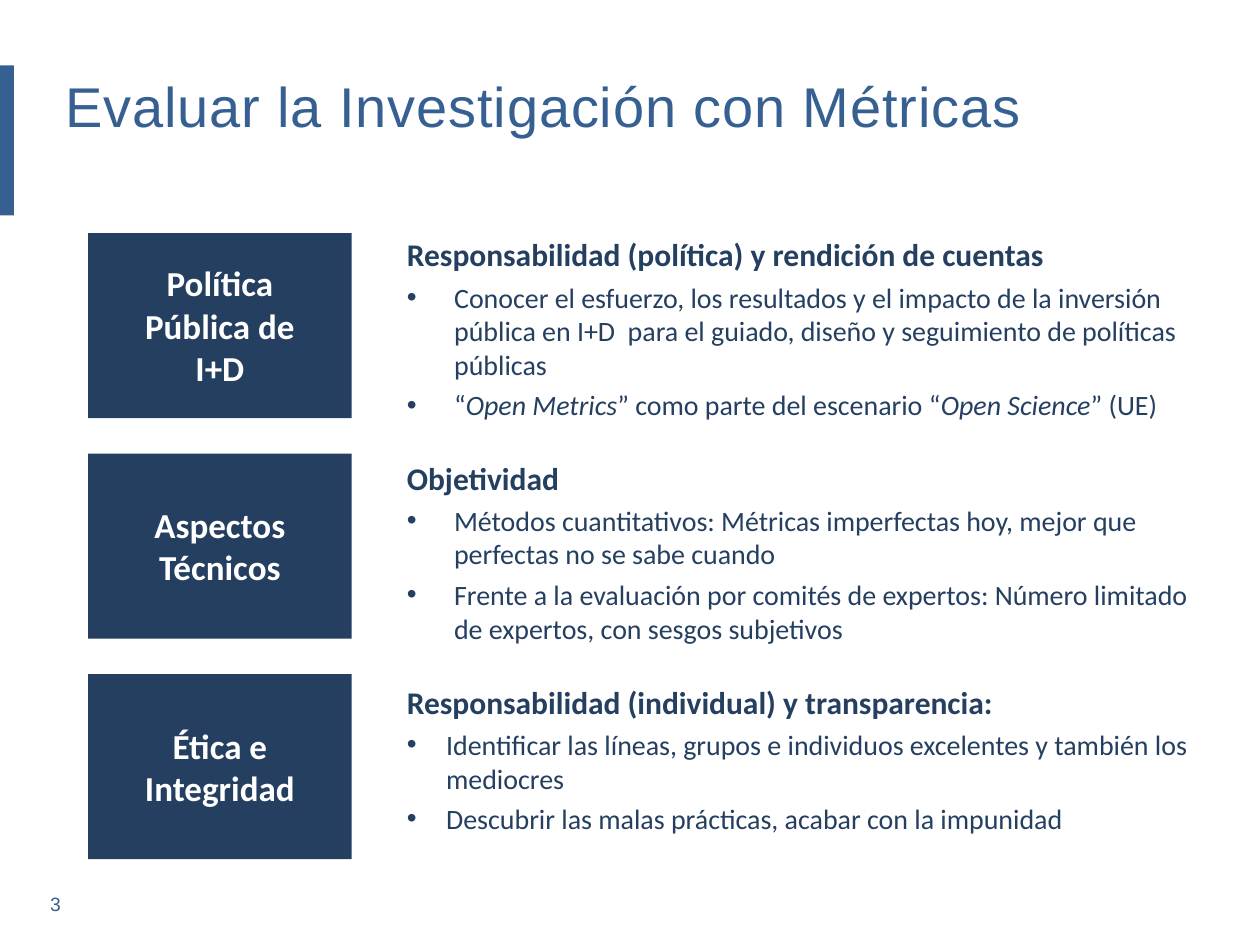
from dataclasses import dataclass

from lxml.etree import SubElement
from pptx import Presentation
from pptx.dml.color import RGBColor
from pptx.enum.shapes import MSO_SHAPE as Preset
from pptx.enum.text import MSO_ANCHOR as Anchor, MSO_AUTO_SIZE as AutoSize, PP_ALIGN as Align
from pptx.oxml.ns import qn
from pptx.util import Pt

NAVY, BLUE, WHITE = "253F61", "376092", "FFFFFF"
BLOCK_LEFT, BLOCK_TOP, BLOCK_WIDTH, BLOCK_HEIGHT = 50.4, 133.2, 150.5, 105.8
BLOCK_PITCH = 126
BODY_LEFT = 225.4
SPACE_AFTER = 4


@dataclass
class Run:
    text: str
    italic: bool = False


@dataclass
class Topic:
    label: str
    label_width: float
    label_height: float
    heading: str
    bullets: list[list[Run]]
    body_top: float
    body_width: float
    body_height: float
    indent: float


TOPICS = [
    Topic("Política Pública de I+D", 121.7, 79.9,
          "Responsabilidad (política) y rendición de cuentas",
          [[Run("Conocer el esfuerzo, los resultados y el impacto de la inversión pública "
                "en I+D  para el guiado, diseño y seguimiento de políticas públicas")],
           [Run("“"), Run("Open Metrics", True), Run("” como parte del escenario “"),
            Run("Open Science", True), Run("” (UE)")]],
          131, 454.3, 118.8, 27),
    Topic("Aspectos Técnicos", 121.7, 55.4,
          "Objetividad",
          [[Run("Métodos cuantitativos: Métricas imperfectas hoy, mejor que perfectas "
                "no se sabe cuando")],
           [Run("Frente a la evaluación por comités de expertos: Número limitado de "
                "expertos, con sesgos subjetivos")]],
          258.5, 463.7, 114.5, 27),
    Topic("Ética e Integridad", BLOCK_WIDTH, 55.4,
          "Responsabilidad (individual) y transparencia:",
          [[Run("Identificar las líneas, grupos e individuos excelentes y también los "
                "mediocres")],
           [Run("Descubrir las malas prácticas, acabar con la impunidad")]],
          386.6, 482.4, 97.9, 22.5),
]


def color(value: str) -> RGBColor:
    return RGBColor.from_string(value)


def add_block(slide, left: float, top: float, width: float, height: float, fill: str) -> None:
    shape = slide.shapes.add_shape(Preset.RECTANGLE, Pt(left), Pt(top), Pt(width), Pt(height))
    shape.shadow.inherit = False
    shape.fill.solid()
    shape.fill.fore_color.rgb = color(fill)
    shape.line.fill.background()


def add_frame(slide, left: float, top: float, width: float, height: float, anchor=Anchor.TOP):
    """Add a wrapping text box and return its text frame."""
    box = slide.shapes.add_textbox(Pt(left), Pt(top), Pt(width), Pt(height))
    frame = box.text_frame
    frame.word_wrap = True
    frame.auto_size = AutoSize.SHAPE_TO_FIT_TEXT
    frame.vertical_anchor = anchor
    return frame


def add_run(paragraph, text: str, size: float, fill: str, font: str = "Calibri",
            bold: bool = False, italic: bool = False, spacing: float = 0) -> None:
    run = paragraph.add_run()
    run.text = text
    run.font.name = font
    run.font.size = Pt(size)
    run.font.bold = bold
    run.font.italic = italic
    run.font.color.rgb = color(fill)
    if spacing:
        run.font._element.set("spc", str(round(spacing * 100)))


def add_bullet(paragraph, indent: float) -> None:
    properties = paragraph._p.get_or_add_pPr()
    properties.set("marL", str(Pt(indent)))
    properties.set("indent", str(-Pt(indent)))
    SubElement(properties, qn("a:buFont"), typeface="Arial")
    SubElement(properties, qn("a:buChar"), char="•")


def add_topic(slide, topic: Topic, block_top: float) -> None:
    add_block(slide, BLOCK_LEFT, block_top, BLOCK_WIDTH, BLOCK_HEIGHT, NAVY)
    label = add_frame(slide, BLOCK_LEFT + (BLOCK_WIDTH - topic.label_width) / 2,
                      block_top + (BLOCK_HEIGHT - topic.label_height) / 2,
                      topic.label_width, topic.label_height).paragraphs[0]
    label.alignment = Align.CENTER
    label.space_after = Pt(SPACE_AFTER)
    add_run(label, topic.label, 20, WHITE, bold=True)

    body = add_frame(slide, BODY_LEFT, topic.body_top, topic.body_width, topic.body_height)
    heading = body.paragraphs[0]
    heading.space_after = Pt(SPACE_AFTER)
    add_run(heading, topic.heading, 18, NAVY, bold=True)
    for runs in topic.bullets:
        paragraph = body.add_paragraph()
        add_bullet(paragraph, topic.indent)
        paragraph.space_after = Pt(SPACE_AFTER)
        for run in runs:
            add_run(paragraph, run.text, 16, NAVY, italic=run.italic)


def main() -> None:
    presentation = Presentation()
    presentation.slide_width, presentation.slide_height = Pt(720), Pt(540)
    slide = presentation.slides.add_slide(presentation.slide_layouts[6])

    add_block(slide, 0, 37.4, 7.9, 85.7, BLUE)
    title = add_frame(slide, 30.2, 36.7, 659.5, 46.1, Anchor.BOTTOM)
    add_run(title.paragraphs[0], "Evaluar la Investigación con Métricas", 32, BLUE, "Arial",
            spacing=0.5)
    for index, topic in enumerate(TOPICS):
        add_topic(slide, topic, BLOCK_TOP + index * BLOCK_PITCH)
    number = add_frame(slide, 21.6, 506.2, 665.8, 20.9)
    add_run(number.paragraphs[0], "3", 11, BLUE, "Arial", spacing=1)

    presentation.save("out.pptx")


if __name__ == "__main__":
    main()
